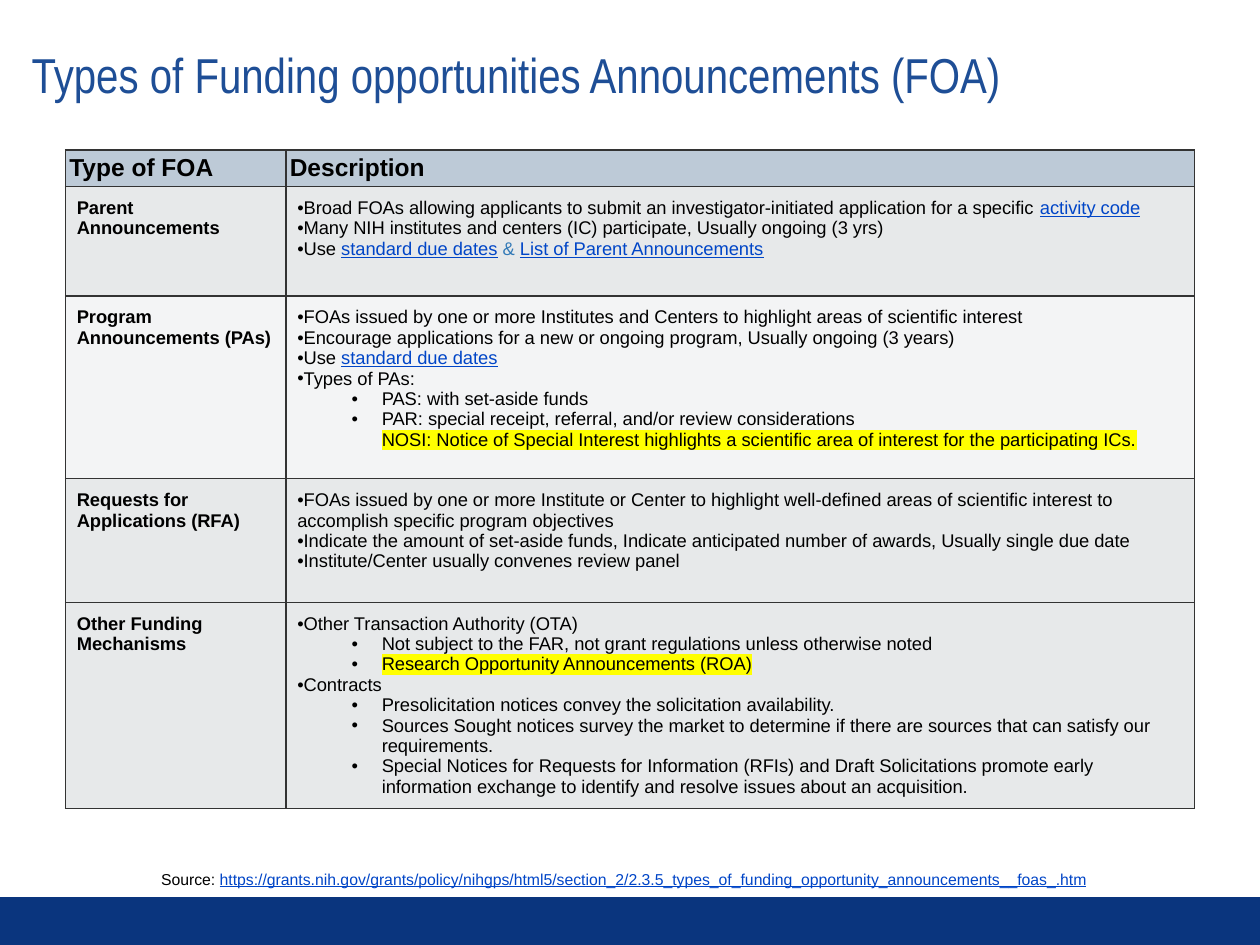
from dataclasses import dataclass

from lxml.etree import SubElement
from pptx import Presentation
from pptx.dml.color import RGBColor as RGB
from pptx.enum.shapes import MSO_SHAPE as Shape
from pptx.enum.text import MSO_ANCHOR as Anchor, MSO_AUTO_SIZE as Auto, PP_ALIGN as Align
from pptx.oxml.ns import qn
from pptx.util import Inches, Pt


@dataclass(frozen=True)
class Theme:
    """Colours, fonts and type sizes of the slide."""
    font: str = "Arial"
    narrow: str = "Arial Narrow"
    title: str = "1E4E96"
    bar: str = "0A357E"
    ink: str = "000000"
    link: str = "0045C7"
    amp: str = "337AB7"
    mark: str = "FFFF00"
    edge: str = "333333"
    head: str = "BDCAD7"
    gray: str = "E7E9EA"
    pale: str = "F3F4F5"
    big: float = 28
    mid: float = 14
    body: float = 10.5
    small: float = 9


T = Theme()
COLS = [1.75, 7.21]
ROWS = [0.29, 0.87, 1.45, 0.98, 1.57]
DUE = ("standard due dates", "link")
KINDS = [
    ("Parent Announcements", T.gray, [
        (0, "Broad FOAs allowing applicants to submit an investigator-initiated application for a specific ",
         ("activity code", "link")),
        (0, "Many NIH institutes and centers (IC) participate, Usually ongoing (3 yrs)"),
        (0, "Use ", DUE, (" & ", "amp"), ("List of Parent Announcements", "link")),
    ]),
    ("Program Announcements (PAs)", T.pale, [
        (0, "FOAs issued by one or more Institutes and Centers to highlight areas of scientific interest"),
        (0, "Encourage applications for a new or ongoing program, Usually ongoing (3 years)"),
        (0, "Use ", DUE),
        (0, "Types of PAs:"),
        (1, "PAS: with set-aside funds"),
        (1, "PAR: special receipt, referral, and/or review considerations"),
        (2, ("NOSI: Notice of Special Interest highlights a scientific area of interest "
             "for the participating ICs.", "mark")),
    ]),
    ("Requests for Applications (RFA)", T.gray, [
        (0, "FOAs issued by one or more Institute or Center to highlight well-defined areas "
            "of scientific interest to accomplish specific program objectives"),
        (0, "Indicate the amount of set-aside funds, Indicate anticipated number of awards, "
            "Usually single due date"),
        (0, "Institute/Center usually convenes review panel"),
    ]),
    ("Other Funding Mechanisms", T.gray, [
        (0, "Other Transaction Authority (OTA)"),
        (1, "Not subject to the FAR, not grant regulations unless otherwise noted"),
        (1, ("Research Opportunity Announcements (ROA)", "mark")),
        (0, "Contracts"),
        (1, "Presolicitation notices convey the solicitation availability."),
        (1, "Sources Sought notices survey the market to determine if there are sources "
            "that can satisfy our requirements."),
        (1, "Special Notices for Requests for Information (RFIs) and Draft Solicitations promote early "
            "information exchange to identify and resolve issues about an acquisition."),
    ]),
]
SOURCE = ("https://grants.nih.gov/grants/policy/nihgps/html5/section_2/"
          "2.3.5_types_of_funding_opportunity_announcements__foas_.htm")


def style(font, size, color=T.ink, bold=False, name=T.font):
    """Set the face, size and colour of a font."""
    font.name, font.size, font.bold = name, Pt(size), bold
    font.color.rgb = RGB.from_string(color)


def add_run(para, part):
    """Add plain text, or a (text, look) pair, to a paragraph."""
    text, look = (part, None) if isinstance(part, str) else part
    run = para.add_run()
    run.text = text
    if look in ("link", "amp"):
        run.font.color.rgb = RGB.from_string(getattr(T, look))
        run.font.underline = look == "link"
    elif look == "mark":
        run.font.color.rgb = RGB.from_string(T.ink)
        light = SubElement(run.font._element, qn("a:highlight")) if hasattr(run.font, "_element") \
            else SubElement(run._r.get_or_add_rPr(), qn("a:highlight"))
        SubElement(light, qn("a:srgbClr"), val=T.mark)


def indent(para, level):
    """Give a paragraph its indent and bullet; level 2 has no bullet."""
    props = para._p.get_or_add_pPr()
    left, hang = (0.67, -0.24 if level == 1 else 0) if level else (0, 0)
    props.set("marL", str(Inches(left)))
    props.set("indent", str(Inches(hang)))
    if level:
        para.level = 1
    if level < 2:
        SubElement(props, qn("a:buFont"), typeface=T.font)
        SubElement(props, qn("a:buChar"), char="•")


def add_edges(cell):
    """Draw thin lines on the four sides of a cell."""
    props = cell._tc.get_or_add_tcPr()
    for spot, side in enumerate(("a:lnL", "a:lnR", "a:lnT", "a:lnB")):
        line = SubElement(props, qn(side), w=str(Pt(0.75)))
        fill = SubElement(line, qn("a:solidFill"))
        SubElement(fill, qn("a:srgbClr"), val=T.edge)
        props.insert(spot, line)


def fill_cell(cell, lines, fill, size, bold, pad):
    """Write lines of (level, parts...) into a cell; level None is plain."""
    cell.fill.solid()
    cell.fill.fore_color.rgb = RGB.from_string(fill)
    add_edges(cell)
    cell.margin_left = cell.margin_right = Inches(pad)
    cell.margin_top = cell.margin_bottom = Inches(pad)
    frame = cell.text_frame
    for spot, (level, *parts) in enumerate(lines):
        para = frame.add_paragraph() if spot else frame.paragraphs[0]
        if level is not None:
            indent(para, level)
        style(para.font, size, bold=bold)
        for part in parts:
            add_run(para, part)


def add_grid(slide):
    """Add the table of announcement types."""
    grid = slide.shapes.add_table(len(ROWS), len(COLS), Inches(0.52), Inches(1.19),
                                  Inches(sum(COLS)), Inches(sum(ROWS))).table
    grid.horz_banding = grid.first_row = False
    for col, width in zip(grid.columns, COLS):
        col.width = Inches(width)
    for row, height in zip(grid.rows, ROWS):
        row.height = Inches(height)
    for col, head in enumerate(("Type of FOA", "Description")):
        fill_cell(grid.cell(0, col), [(None, head)], T.head, T.mid, True, 0.03)
    for row, (name, fill, lines) in enumerate(KINDS, 1):
        fill_cell(grid.cell(row, 0), [(None, name)], fill, T.body, True, 0.09)
        fill_cell(grid.cell(row, 1), lines, fill, T.body, False, 0.09)


def add_title(slide, text):
    """Place and format the title."""
    title = slide.shapes.title
    title.left, title.top = Inches(0.15), Inches(0.2)
    title.width, title.height = Inches(9.67), Inches(0.83)
    frame = title.text_frame
    frame.auto_size, frame.vertical_anchor = Auto.NONE, Anchor.MIDDLE
    frame.margin_left = frame.margin_top = frame.margin_bottom = Inches(0.1)
    frame.margin_right = Inches(0.2)
    para = frame.paragraphs[0]
    para.text, para.alignment, para.line_spacing = text, Align.LEFT, 0.9
    style(para.font, T.big, T.title, name=T.narrow)


def add_bar(slide):
    """Add the band along the foot of the slide."""
    bar = slide.shapes.add_shape(Shape.RECTANGLE, 0, Inches(7.12), Inches(10), Inches(0.38))
    bar.shadow.inherit = False
    bar.fill.solid()
    bar.fill.fore_color.rgb = RGB.from_string(T.bar)
    bar.line.fill.background()


def add_source(slide):
    """Add the source line under the table."""
    box = slide.shapes.add_textbox(Inches(1.18), Inches(6.85), Inches(7.65), Inches(0.25))
    frame = box.text_frame
    frame.word_wrap, frame.auto_size = True, Auto.SHAPE_TO_FIT_TEXT
    para = frame.paragraphs[0]
    style(para.font, T.small)
    for part in ("Source: ", (SOURCE, "link")):
        add_run(para, part)


def main():
    """Build and save the slide."""
    deck = Presentation()
    deck.slide_width, deck.slide_height = Inches(10), Inches(7.5)
    slide = deck.slides.add_slide(deck.slide_layouts[5])
    add_bar(slide)
    add_title(slide, "Types of Funding opportunities Announcements (FOA)")
    add_grid(slide)
    add_source(slide)
    deck.save("out.pptx")


if __name__ == "__main__":
    main()
